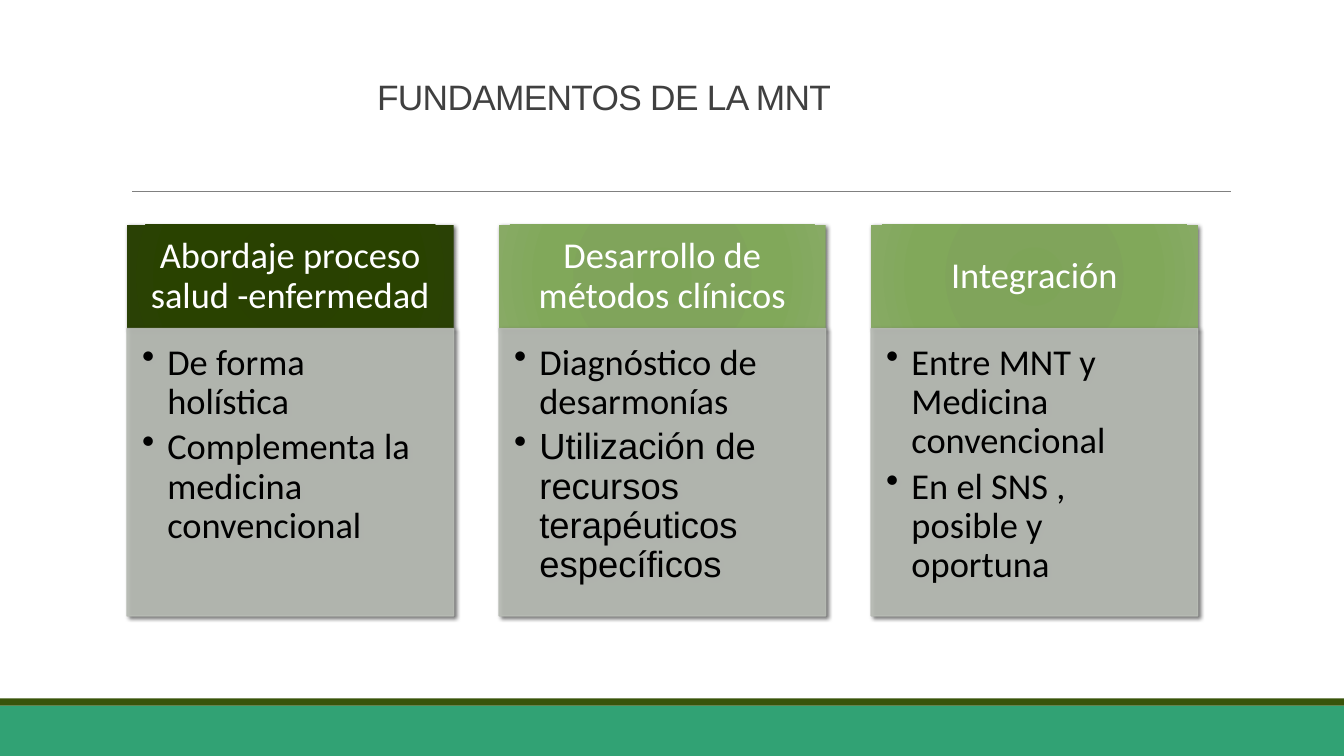
from lxml.etree import SubElement
from pptx import Presentation
from pptx.dml.color import RGBColor
from pptx.enum.shapes import MSO_CONNECTOR, MSO_SHAPE
from pptx.enum.text import MSO_ANCHOR as Anchor, MSO_AUTO_SIZE, PP_ALIGN as Align
from pptx.oxml import parse_xml
from pptx.oxml.ns import nsdecls, qn
from pptx.util import Pt

EMU_PER_PX = 9144
WHITE = RGBColor(0xFF, 0xFF, 0xFF)
BLACK = RGBColor(0, 0, 0)
TITLE_GREY = RGBColor(0x40, 0x40, 0x40)
RULE_GREY = RGBColor(0x80, 0x80, 0x80)
PANEL_GREY = RGBColor(0xB7, 0xBB, 0xB4)
FOOTER_GREEN = RGBColor(0x31, 0xA2, 0x74)
STRIPE_GREEN = RGBColor(0x38, 0x54, 0x0A)
DARK_SHADES = [RGBColor(0x28, 0x41, 0x00), RGBColor(0x29, 0x41, 0x01),
               RGBColor(0x29, 0x42, 0x00), RGBColor(0x2A, 0x41, 0x05)]
LIGHT_SHADES = [RGBColor(0x7E, 0xA4, 0x58), RGBColor(0x80, 0xA4, 0x5B),
                RGBColor(0x81, 0xA8, 0x5A), RGBColor(0x88, 0xAA, 0x65)]
SHADE_STOPS = [0, 34, 70, 100]

COLUMN_LEFT, COLUMN_STEP, COLUMN_WIDTH = 126, 369, 324
HEADING_TOP, HEADING_HEIGHT, PANEL_HEIGHT = 223, 103, 285
COLUMNS = [
    ("Abordaje proceso salud -enfermedad", DARK_SHADES,
     [("De forma holística", "Calibri"),
      ("Complementa la medicina convencional", "Calibri")]),
    ("Desarrollo de métodos clínicos", LIGHT_SHADES,
     [("Diagnóstico de desarmonías", "Calibri"),
      ("Utilización de recursos terapéuticos específicos", "Arial")]),
    ("Integración", LIGHT_SHADES,
     [("Entre MNT y Medicina convencional", "Calibri"),
      ("En el SNS , posible y oportuna", "Calibri")]),
]


def px(length):
    """Turn a length in px into EMU."""
    return length * EMU_PER_PX


def add_box(slide, left, top, width, height, color=None):
    """Add a rectangle without outline or shadow."""
    box = slide.shapes.add_shape(MSO_SHAPE.RECTANGLE, px(left), px(top), px(width), px(height))
    box.shadow.inherit = False
    box.line.fill.background()
    if color is not None:
        box.fill.solid()
        box.fill.fore_color.rgb = color
    return box


def add_radial_fill(box, shades):
    """Fill a box with a circular gradient."""
    stops = "".join(f'<a:gs pos="{stop * 1000}"><a:srgbClr val="{shade}"/></a:gs>'
                    for stop, shade in zip(SHADE_STOPS, shades))
    gradient = parse_xml(
        f'<a:gradFill {nsdecls("a")} rotWithShape="1"><a:gsLst>{stops}</a:gsLst>'
        '<a:path path="circle"><a:fillToRect l="100000" t="100000" r="100000" b="100000"/>'
        '</a:path></a:gradFill>')
    box.element.spPr.find(qn("a:prstGeom")).addnext(gradient)


def add_shadow(box):
    """Give a box a soft shadow towards the lower right."""
    effects = box.element.spPr.find(qn("a:effectLst"))
    effects.append(parse_xml(
        f'<a:outerShdw {nsdecls("a")} blurRad="38100" dist="25400" dir="2700000" rotWithShape="0">'
        '<a:srgbClr val="000000"><a:alpha val="60000"/></a:srgbClr></a:outerShdw>'))


def set_frame(shape, anchor, insets):
    """Set wrapping, anchor and left, top, right, bottom insets."""
    frame = shape.text_frame
    frame.word_wrap = True
    frame.auto_size = MSO_AUTO_SIZE.NONE
    frame.vertical_anchor = anchor
    (frame.margin_left, frame.margin_top,
     frame.margin_right, frame.margin_bottom) = map(px, insets)
    return frame


def write(paragraph, text, *, size=26, font="Calibri", color=BLACK, align=Align.LEFT,
          line_spacing=0.9, after=0, tracking=None, bullet=False):
    """Write formatted text into a paragraph."""
    paragraph.alignment = align
    paragraph.line_spacing = line_spacing
    paragraph.space_before = Pt(0)
    paragraph.space_after = Pt(after)
    run = paragraph.add_run()
    run.text = text
    run.font.size = Pt(size)
    run.font.name = font
    run.font.color.rgb = color
    if tracking is not None:
        run.font._element.set("spc", str(tracking))
    if bullet:
        properties = paragraph._p.get_or_add_pPr()
        properties.set("marL", str(px(25)))
        properties.set("indent", str(px(-25)))
        SubElement(properties, qn("a:buChar")).set("char", "•")


def add_rule(slide, left, right, y):
    """Add the thin horizontal rule under the title."""
    rule = slide.shapes.add_connector(MSO_CONNECTOR.STRAIGHT, px(left), px(y), px(right), px(y))
    rule.line.color.rgb = RULE_GREY
    rule.line.width = Pt(0.5)
    SubElement(rule.element.spPr, qn("a:effectLst"))


def add_title(slide, text):
    """Place and write the slide title."""
    title = slide.shapes.title
    title.left, title.top, title.width, title.height = map(px, (364, 75, 638, 47))
    frame = set_frame(title, Anchor.BOTTOM, (10, 5, 10, 5))
    write(frame.paragraphs[0], text, size=25.2, font="Arial", color=TITLE_GREY,
          line_spacing=0.85, tracking=-50)


def add_heading(slide, left, text, shades):
    """Add the coloured heading of a column."""
    heading = add_box(slide, left, HEADING_TOP, COLUMN_WIDTH, HEADING_HEIGHT)
    add_radial_fill(heading, shades)
    add_shadow(heading)
    frame = set_frame(heading, Anchor.MIDDLE, (20, 12, 20, 12))
    write(frame.paragraphs[0], text, color=WHITE, align=Align.CENTER)


def add_panel(slide, left, points):
    """Add the grey panel of a column with its bulleted points."""
    panel = add_box(slide, left, HEADING_TOP + HEADING_HEIGHT, COLUMN_WIDTH, PANEL_HEIGHT,
                    PANEL_GREY)
    panel.line.color.rgb = PANEL_GREY
    panel.line.width = Pt(1)
    for color in panel.element.spPr.iter(qn("a:srgbClr")):
        SubElement(color, qn("a:alpha")).set("val", "90000")
    add_shadow(panel)
    frame = set_frame(panel, Anchor.TOP, (15, 15, 20, 23))
    for index, (point, font) in enumerate(points):
        paragraph = frame.add_paragraph() if index else frame.paragraphs[0]
        write(paragraph, point, font=font, after=4.3, bullet=True)


def main():
    """Build the slide and save it."""
    deck = Presentation()
    deck.slide_width, deck.slide_height = px(1333), px(750)
    slide = deck.slides.add_slide(deck.slide_layouts[5])
    add_box(slide, 0, 700, 1333, 50, FOOTER_GREEN)
    add_box(slide, 0, 693, 1333, 7, STRIPE_GREEN)
    add_rule(slide, 131, 1221, 190)
    add_title(slide, "FUNDAMENTOS DE LA MNT")
    for index, (heading, shades, points) in enumerate(COLUMNS):
        left = COLUMN_LEFT + index * COLUMN_STEP
        add_heading(slide, left, heading, shades)
        add_panel(slide, left, points)
    deck.save("out.pptx")


if __name__ == "__main__":
    main()
